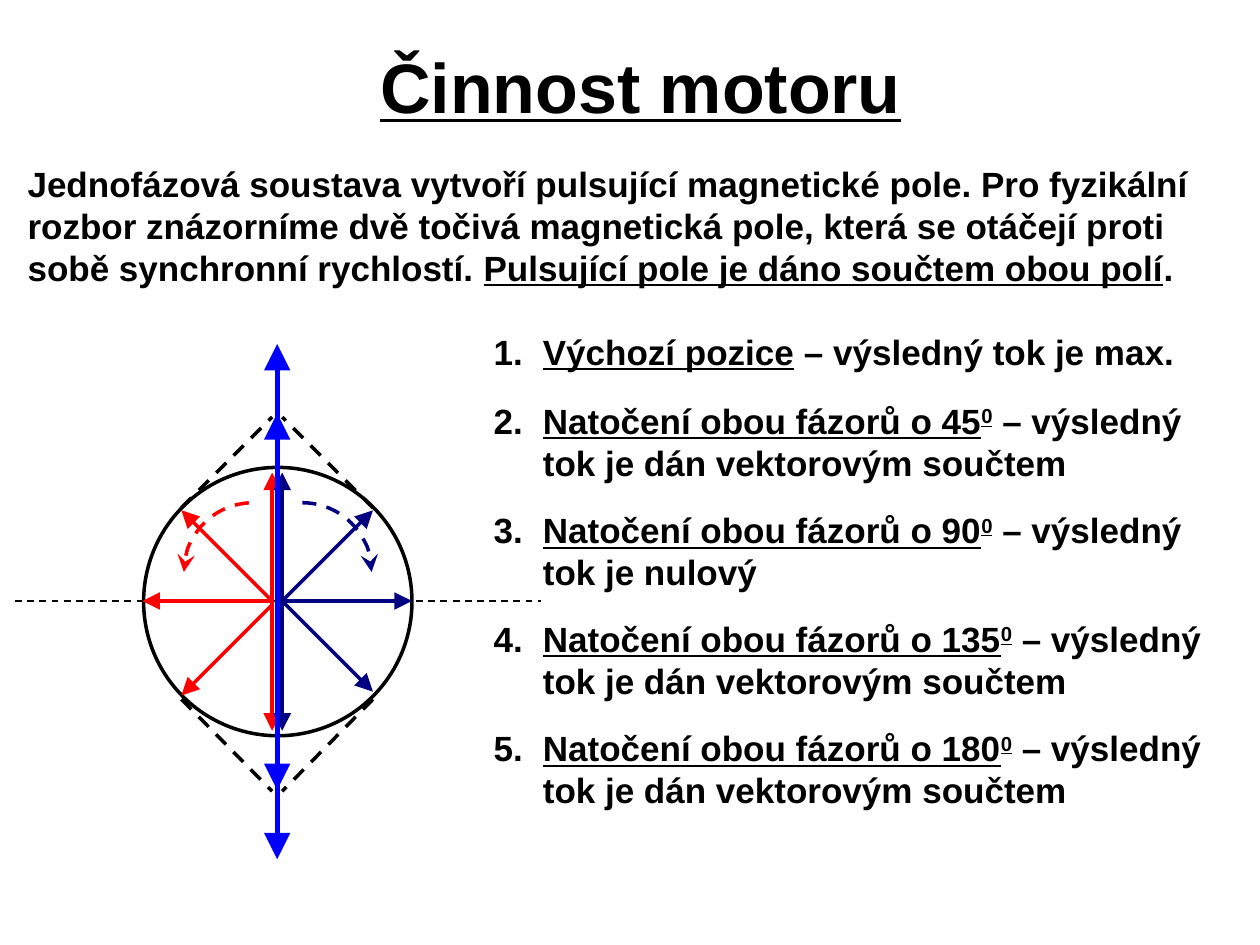
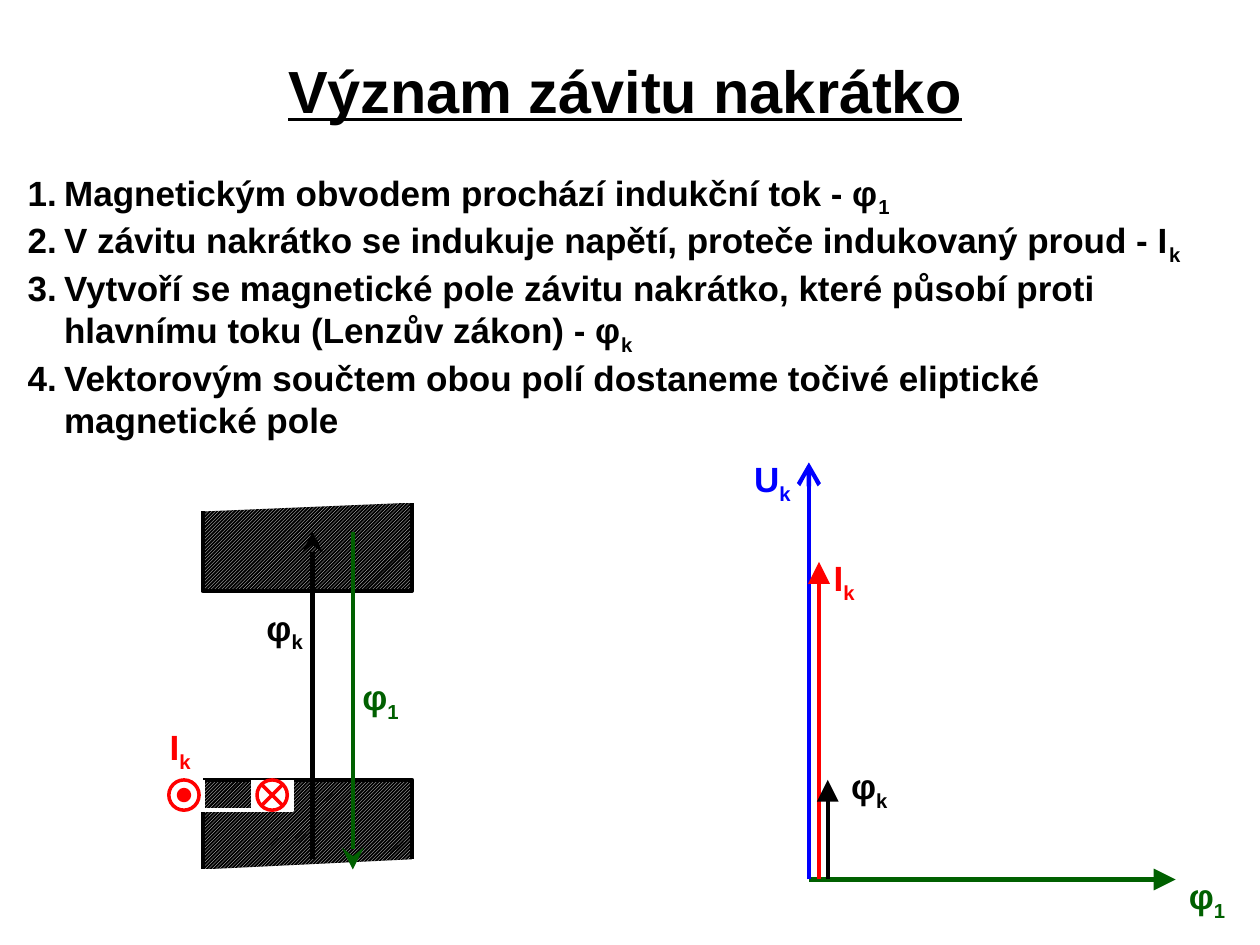
from lxml import etree
from pptx import Presentation
from pptx.dml.color import RGBColor
from pptx.enum.dml import MSO_LINE, MSO_PATTERN
from pptx.enum.shapes import MSO_CONNECTOR, MSO_SHAPE
from pptx.enum.text import MSO_ANCHOR, PP_ALIGN
from pptx.oxml.ns import qn
from pptx.util import Pt

PX = 9144
FONT = "Arial"
BLACK = RGBColor(0, 0, 0)
WHITE = RGBColor(255, 255, 255)
RED = RGBColor(255, 0, 0)
BLUE = RGBColor(0, 0, 255)
NAVY = RGBColor(0, 0, 128)
GREEN = RGBColor(0, 96, 0)

STRAIGHT = MSO_CONNECTOR.STRAIGHT
OVAL, ARC = MSO_SHAPE.OVAL, MSO_SHAPE.ARC
DASH = MSO_LINE.DASH
HATCH = MSO_PATTERN.DARK_UPWARD_DIAGONAL
LEFT, CENTER = PP_ALIGN.LEFT, PP_ALIGN.CENTER
TOP, MIDDLE = MSO_ANCHOR.TOP, MSO_ANCHOR.MIDDLE


def style_outline(shape, color, width, dashed=False, head=None, tail=None):
    shape.line.color.rgb = color
    shape.line.width = Pt(width)
    if dashed:
        shape.line.dash_style = DASH
    properties = shape._element.spPr
    outline = properties.find(qn("a:ln"))
    for tag, kind in (("a:headEnd", head), ("a:tailEnd", tail)):
        if kind:
            etree.SubElement(outline, qn(tag), type=kind, w="lg", len="lg")
    etree.SubElement(properties, qn("a:effectLst"))


def add_text(slide, box, paragraphs, size=20, color=BLACK, align=LEFT,
             anchor=TOP, inset=None, hanging=0, wrap=True):
    frame = slide.shapes.add_textbox(*(n * PX for n in box)).text_frame
    frame.word_wrap = wrap
    frame.vertical_anchor = anchor
    if inset is not None:
        frame.margin_left = frame.margin_right = inset * PX
        frame.margin_top = frame.margin_bottom = inset * PX
    for index, runs in enumerate(paragraphs):
        paragraph = frame.add_paragraph() if index else frame.paragraphs[0]
        paragraph.alignment = align
        paragraph.font.name = FONT
        paragraph.font.size = Pt(size)
        paragraph.font.bold = True
        paragraph.font.color.rgb = color
        if hanging:
            layout = paragraph._p.get_or_add_pPr()
            layout.set("marL", str(hanging * PX))
            layout.set("indent", str(-hanging * PX))
        for text, underline, baseline in runs:
            run = paragraph.add_run()
            run.text = text
            if underline:
                run.font.underline = True
            if baseline:
                run._r.get_or_add_rPr().set("baseline", str(baseline * 1000))


presentation = Presentation()
presentation.slide_width = 1000 * PX
presentation.slide_height = 750 * PX
blank = presentation.slide_layouts[6]

titles = [
    ("Činnost motoru", (50, 27, 917, 81), 40),
    ("Význam závitu nakrátko", (177, 27, 638, 88), 34),
]
slides = []
for title, box, size in titles:
    slide = presentation.slides.add_slide(blank)
    add_text(slide, box, [[(title, True, 0)]], size, align=CENTER, anchor=MIDDLE)
    slides.append(slide)
motor, winding = slides

add_text(motor, (12, 124, 969, 111), [[
    ("Jednofázová soustava vytvoří pulsující magnetické pole. Pro fyzikální "
     "rozbor znázorníme dvě točivá magnetická pole, která se otáčejí proti "
     "sobě synchronní rychlostí. ", False, 0),
    ("Pulsující pole je dáno součtem obou polí", True, 0),
    (".", False, 0),
]])

vector_sum = "tok je dán vektorovým součtem"
positions = [
    (257, 43, "Výchozí pozice", "", "tok je max."),
    (312, 77, "Natočení obou fázorů o 45", "0", vector_sum),
    (399, 77, "Natočení obou fázorů o 90", "0", "tok je nulový"),
    (485, 77, "Natočení obou fázorů o 135", "0", vector_sum),
    (572, 77, "Natočení obou fázorů o 180", "0", vector_sum),
]
for number, (top, height, position, degree, result) in enumerate(positions, 1):
    runs = [(f"{number}.\t", False, 0), (position, True, 0)]
    if degree:
        runs.append((degree, True, 30))
    runs.append((f" – výsledný {result}", False, 0))
    add_text(motor, (382, top, 606, height), [runs], hanging=39)

rotor = motor.shapes.add_shape(OVAL, 114 * PX, 371 * PX, 213 * PX, 213 * PX)
rotor.fill.background()
style_outline(rotor, BLACK, 2)

rotations = [
    (185, 270, 0, NAVY, None, "stealth"),
    (146, 180, 270, RED, "stealth", None),
]
for left, start, end, color, head, tail in rotations:
    arc = motor.shapes.add_shape(ARC, left * PX, 399 * PX, 110 * PX, 110 * PX)
    arc.adjustments[0] = start * 0.6
    arc.adjustments[1] = end * 0.6
    arc.fill.background()
    style_outline(arc, color, 2, True, head, tail)

axis_x, axis_y = 220, 477
motor_lines = [
    (12, axis_y, 429, axis_y, BLACK, 1, True, None),
    (axis_x, 288, axis_x, 666, BLACK, 1, True, None),
]
for side, color, lower_start in ((-1, RED, 480), (1, NAVY, 477)):
    root = axis_x + 4 * side
    tip = axis_x + 76 * side
    for x1, y1, x2, y2 in (
        (root, axis_y, root, 375),
        (root, axis_y, tip, 405),
        (root, axis_y, root + 103 * side, axis_y),
        (root, lower_start, tip, lower_start + 72),
        (root, axis_y, root, 580),
    ):
        motor_lines.append((x1, y1, x2, y2, color, 2, False, "triangle"))
    for start_y, end_y in ((403, 331), (555, 628)):
        motor_lines.append((tip, start_y, root, end_y, BLACK, 2, True, None))
for end_y in (328, 627, 273, 682):
    motor_lines.append((axis_x, axis_y, axis_x, end_y, BLUE, 3, False, "triangle"))

add_text(winding, (12, 131, 961, 210), [
    [("1.\tMagnetickým obvodem prochází indukční tok - φ", False, 0),
     ("1", False, -25)],
    [("2.\tV závitu nakrátko se indukuje napětí, proteče indukovaný proud - I",
      False, 0), ("k", False, -25)],
    [("3.\tVytvoří se magnetické pole závitu nakrátko, které působí proti "
      "hlavnímu toku (Lenzův zákon) - φ", False, 0), ("k", False, -25)],
    [("4.\tVektorovým součtem obou polí dostaneme točivé eliptické "
      "magnetické pole", False, 0)],
], hanging=29)

upper_pole = [(161, 406), (161, 469), (327, 469), (327, 399)]
lower_pole = [(327, 682), (327, 619), (161, 619), (161, 690)]
slots = [[(left, 619), (left, 643), (left + 31, 643), (left + 31, 619)]
         for left in (201, 130)]
for points in (upper_pole, lower_pole, *slots):
    builder = winding.shapes.build_freeform(*points[0], scale=PX)
    builder.add_line_segments(points[1:], close=False)
    outline = builder.convert_to_shape()
    if points in slots:
        outline.fill.solid()
        outline.fill.fore_color.rgb = WHITE
        style_outline(outline, WHITE, 2.5)
    else:
        outline.fill.patterned()
        outline.fill.pattern = HATCH
        outline.fill.fore_color.rgb = WHITE
        outline.fill.back_color.rgb = BLACK
        style_outline(outline, BLACK, 2.5)

winding_lines = [
    (130, 619, 161, 619, WHITE, 2.5, False, None),
    (161, 643, 201, 643, WHITE, 2.5, False, None),
    (280, 422, 280, 690, GREEN, 2.5, False, "stealth"),
    (208, 623, 224, 639, RED, 2, False, None),
    (208, 639, 224, 623, RED, 2, False, None),
    (248, 682, 248, 422, BLACK, 2.5, False, "stealth"),
    (642, 698, 933, 698, GREEN, 2.5, False, "triangle"),
    (642, 698, 642, 367, BLUE, 2.5, False, "arrow"),
    (650, 698, 650, 446, RED, 2.5, False, "triangle"),
    (657, 698, 657, 619, BLACK, 2.5, False, "triangle"),
]
for slide, lines in ((motor, motor_lines), (winding, winding_lines)):
    for x1, y1, x2, y2, color, width, dashed, arrow in lines:
        connector = slide.shapes.add_connector(
            STRAIGHT, x1 * PX, y1 * PX, x2 * PX, y2 * PX)
        style_outline(connector, color, width, dashed, tail=arrow)

for left, top, diameter, width, filled in (
    (204, 619, 24, 2, False),
    (134, 619, 24, 2, False),
    (142, 627, 8, 2.5, True),
):
    conductor = winding.shapes.add_shape(
        OVAL, left * PX, top * PX, diameter * PX, diameter * PX)
    if filled:
        conductor.fill.solid()
        conductor.fill.fore_color.rgb = RED
    else:
        conductor.fill.background()
    style_outline(conductor, RED, width)

labels = [
    (282, 532, 40, "φ", "1", GREEN),
    (938, 690, 40, "φ", "1", GREEN),
    (206, 477, 40, "φ", "k", BLACK),
    (594, 359, 38, "U", "k", BLUE),
    (130, 572, 26, "I", "k", RED),
    (657, 438, 26, "I", "k", RED),
    (670, 603, 40, "φ", "k", BLACK),
]
for left, top, width, symbol, index, color in labels:
    add_text(winding, (left, top, width, 41),
             [[(symbol, False, 0), (index, False, -25)]],
             color=color, align=CENTER, inset=4, wrap=False)

presentation.save("out.pptx")
